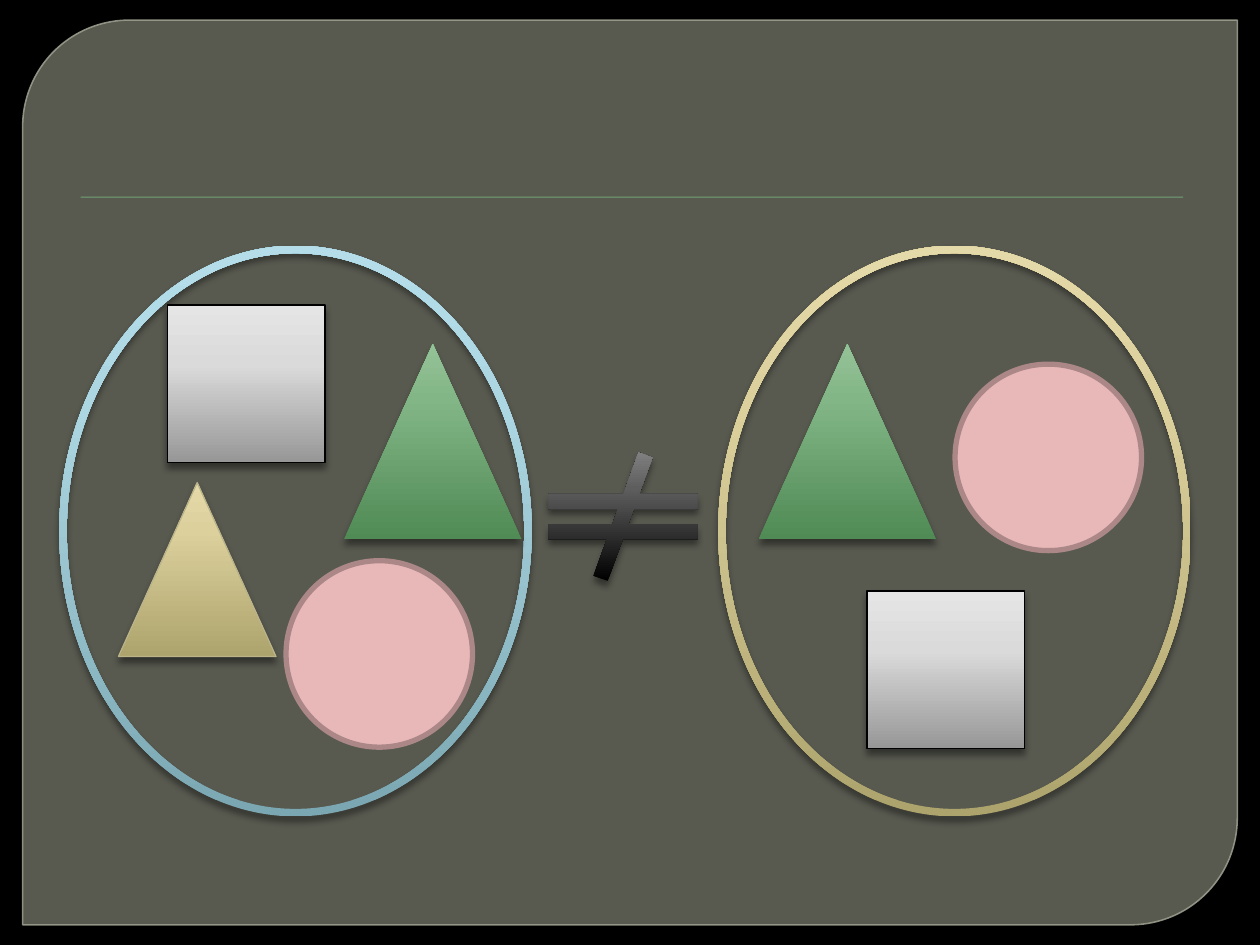
from copy import deepcopy

from lxml.etree import SubElement
from pptx import Presentation
from pptx.dml.color import RGBColor
from pptx.enum.shapes import MSO_SHAPE
from pptx.oxml.ns import qn
from pptx.util import Inches, Pt

# Gradients run from bottom to top: (position, colour)
BLUE = [(0, "7BA7B3"), (72, "ACD7E2"), (100, "B4DDE9")]
TAN = [(0, "ADA36C"), (72, "DCD19D"), (100, "E4D9A8")]
GREEN = [(0, "508A55"), (72, "83B687"), (100, "94C298")]
GREY = [(0, "979797"), (62, "DADADA"), (100, "E5E5E5")]
BLACK = [(0, "000000"), (72, "5E5E5E"), (100, "7F7F7F")]

SOFT = {"alpha": 43, "blur": 4, "dist": 3}
TIGHT = {"alpha": 75, "blur": 1, "dist": 1}

# Each style: preset, size and format of one member of a set
STYLES = {
    "circle": (MSO_SHAPE.OVAL, (1.48, 1.48),
               {"fill": "E8B7B7", "line": ("AC8787", 3)}),
    "green triangle": (MSO_SHAPE.ISOSCELES_TRIANGLE, (1.41, 1.55),
                       {"fill": GREEN, "shadow": SOFT}),
    "square": (MSO_SHAPE.RECTANGLE, (1.25, 1.25),
               {"fill": GREY, "line": ("000000", 0.75), "shadow": SOFT}),
    "tan triangle": (MSO_SHAPE.ISOSCELES_TRIANGLE, (1.25, 1.38),
                     {"fill": TAN, "line": ("BBB389", 0.75), "shadow": SOFT}),
}


def rgb(hex_color):
    return RGBColor.from_string(hex_color)


def set_alpha(fill_element, percent):
    color = fill_element.find(".//" + qn("a:srgbClr"))
    SubElement(color, qn("a:alpha"), val=str(percent * 1000))


def set_fill(sp, fill):
    """Fill with one hex colour, or with a list of gradient stops."""
    if isinstance(fill, str):
        sp.fill.solid()
        sp.fill.fore_color.rgb = rgb(fill)
        return
    sp.fill.gradient()
    sp.fill.gradient_angle = 90
    stop_list = sp.element.spPr.find(".//" + qn("a:gsLst"))
    while len(stop_list) < len(fill):
        stop_list.append(deepcopy(stop_list[0]))
    for stop, (position, color) in zip(sp.fill.gradient_stops, fill):
        stop.position = position / 100
        stop.color.rgb = rgb(color)


def set_line(sp, line):
    if line is None:
        sp.line.fill.background()
        return
    color, width = line
    sp.line.color.rgb = rgb(color)
    sp.line.width = Pt(width)


def set_shadow(sp, shadow):
    """Drop a black shadow straight down, or remove the theme shadow."""
    sp.shadow.inherit = False
    if shadow is None:
        return
    effects = sp.element.spPr.find(qn("a:effectLst"))
    outer = SubElement(effects, qn("a:outerShdw"),
                       blurRad=str(Pt(shadow["blur"])),
                       dist=str(Pt(shadow["dist"])),
                       dir="5400000", rotWithShape="0")
    SubElement(outer, qn("a:srgbClr"), val="000000")
    set_alpha(effects, shadow["alpha"])


def add_preset(s, preset, box, fill, line=None, shadow=None, adj=()):
    sp = s.shapes.add_shape(preset, *(Inches(v) for v in box))
    for i, value in enumerate(adj):
        sp.adjustments[i] = value
    set_fill(sp, fill)
    set_line(sp, line)
    set_shadow(sp, shadow)
    return sp


def add_frame(s, box):
    """Rounded panel with the title rule inside it."""
    left, top, width, height = box
    panel = add_preset(s, MSO_SHAPE.ROUND_2_DIAG_RECTANGLE, box, "888B7B",
                       line=("9DA090", 0.87), adj=(0.118, 0))
    spPr = panel.element.spPr
    set_alpha(spPr.find(qn("a:solidFill")), 65)
    set_alpha(spPr.find(qn("a:ln")), 88)
    add_preset(s, MSO_SHAPE.RECTANGLE,
               (left + 0.46, top + 1.4, width - 0.89, 0.01),
               "72A376", shadow=TIGHT)


def add_set(s, box, ring_fill, members):
    """Ring holding members, each given as style name and offset."""
    left, top = box[:2]
    add_preset(s, MSO_SHAPE.DONUT, box, ring_fill, shadow=SOFT, adj=(0.016,))
    for name, (dx, dy) in members:
        preset, size, style = STYLES[name]
        add_preset(s, preset, (left + dx, top + dy, *size), **style)


def add_not_equal(s, box):
    add_preset(s, MSO_SHAPE.MATH_NOT_EQUAL, box, BLACK, shadow=SOFT,
               adj=(0.117, 66, 0.118))


def main():
    prs = Presentation()
    prs.slide_width, prs.slide_height = Inches(10), Inches(7.5)
    s = prs.slides.add_slide(prs.slide_layouts[6])
    s.background.fill.solid()
    s.background.fill.fore_color.rgb = rgb("000000")

    add_frame(s, (0.18, 0.16, 9.64, 7.18))
    add_set(s, (0.47, 1.95, 3.75, 4.53), BLUE, [
        ("circle", (1.8, 2.5)),
        ("green triangle", (2.26, 0.78)),
        ("square", (0.86, 0.47)),
        ("tan triangle", (0.47, 1.88)),
    ])
    add_set(s, (5.7, 1.95, 3.75, 4.53), TAN, [
        ("circle", (1.88, 0.94)),
        ("green triangle", (0.32, 0.78)),
        ("square", (1.18, 2.74)),
    ])
    add_not_equal(s, (4.14, 3.59, 1.61, 1.02))
    prs.save("out.pptx")


if __name__ == "__main__":
    main()
